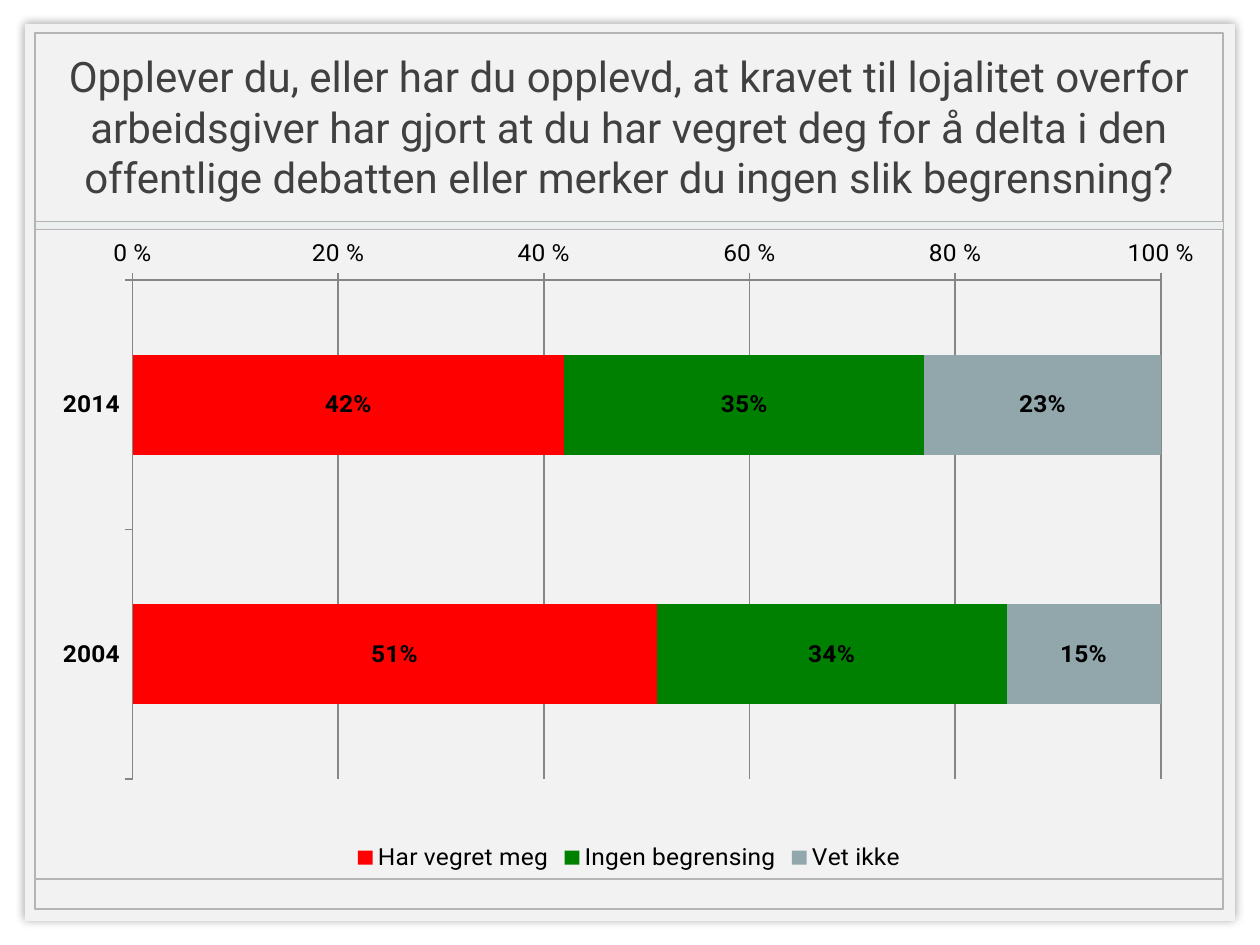
import lxml.etree
import pptx
import pptx.chart.data
import pptx.dml.color
import pptx.enum.chart
import pptx.enum.shapes
import pptx.enum.text
import pptx.oxml
import pptx.oxml.ns
import pptx.util

PIXELS_PER_INCH = 126
FONT = "Roboto"
COLORS = {
    "panel": "F2F2F2",
    "band": "EBEFF0",
    "rule": "B4B4B3",
    "title": "404040",
    "text": "000000",
    "grid": "868686",
    "shadow": "000000",
}
TITLE = (
    "Opplever du, eller har du opplevd, at kravet til lojalitet overfor "
    "arbeidsgiver har gjort at du har vegret deg for å delta i den "
    "offentlige debatten eller merker du ingen slik begrensning?"
)
YEARS = ("2014", "2004")
ANSWERS = (
    ("Har vegret meg", (0.42, 0.51), "FF0000"),
    ("Ingen begrensing", (0.35, 0.34), "008000"),
    ("Vet ikke", (0.23, 0.15), "91A7AB"),
)
PLOT_LAYOUT = {"x": 0.08, "y": 0.02, "w": 0.87, "h": 0.82}


def px(length):
    return pptx.util.Emu(round(length * 914400 / PIXELS_PER_INCH))


def rgb(color):
    return pptx.dml.color.RGBColor.from_string(color)


def set_line(line, color, width):
    line.color.rgb = rgb(color)
    line.width = pptx.util.Pt(width)


def set_font(font, size, color, bold=False):
    font.name = FONT
    font.size = pptx.util.Pt(size)
    font.bold = bold
    font.color.rgb = rgb(color)


def add_rectangle(slide, box, fill=None, line_width=None):
    shape = slide.shapes.add_shape(
        pptx.enum.shapes.MSO_SHAPE.RECTANGLE, *map(px, box)
    )
    shape.shadow.inherit = False
    if fill:
        shape.fill.solid()
        shape.fill.fore_color.rgb = rgb(fill)
    else:
        shape.fill.background()
    if line_width:
        set_line(shape.line, COLORS["rule"], line_width)
    else:
        shape.line.fill.background()
    return shape


def add_soft_shadow(shape):
    effects = shape.element.spPr.find(pptx.oxml.ns.qn("a:effectLst"))
    effects.append(pptx.oxml.parse_xml(
        f'<a:outerShdw {pptx.oxml.ns.nsdecls("a")} blurRad="{pptx.util.Pt(5)}" '
        'dist="0" dir="0" algn="ctr" rotWithShape="0">'
        f'<a:srgbClr val="{COLORS["shadow"]}"><a:alpha val="40000"/></a:srgbClr>'
        "</a:outerShdw>"
    ))


def add_frame(slide, box):
    left, top, width, height = box
    add_soft_shadow(add_rectangle(slide, box, COLORS["panel"]))
    inner_left, inner_width = left + 10, width - 22
    add_rectangle(
        slide, (inner_left, top + 9, inner_width, height - 21), line_width=1
    )
    rule_top = px(top + 855)
    rule = slide.shapes.add_connector(
        pptx.enum.shapes.MSO_CONNECTOR.STRAIGHT,
        px(inner_left), rule_top, px(inner_left + inner_width), rule_top,
    )
    set_line(rule.line, COLORS["rule"], 1)
    lxml.etree.SubElement(rule.element.spPr, pptx.oxml.ns.qn("a:effectLst"))
    add_rectangle(
        slide, (inner_left, top + 197, inner_width, 8), COLORS["band"], 0.25
    )


def place_title(slide, box):
    title = slide.shapes.title
    title.left, title.top, title.width, title.height = map(px, box)
    slide.shapes.element.append(title.element)
    text_frame = title.text_frame
    text_frame.text = TITLE
    text_frame.word_wrap = True
    text_frame.auto_size = pptx.enum.text.MSO_AUTO_SIZE.NONE
    text_frame.vertical_anchor = pptx.enum.text.MSO_ANCHOR.MIDDLE
    paragraph = text_frame.paragraphs[0]
    paragraph.alignment = pptx.enum.text.PP_ALIGN.CENTER
    set_font(paragraph.font, 24, COLORS["title"])


def set_plot_layout(chart):
    plot_area = chart.element.chart.plotArea
    for layout in plot_area.findall(pptx.oxml.ns.qn("c:layout")):
        plot_area.remove(layout)
    sizes = "".join(
        f'<c:{name} val="{value}"/>' for name, value in PLOT_LAYOUT.items()
    )
    plot_area.insert(0, pptx.oxml.parse_xml(
        f'<c:layout {pptx.oxml.ns.nsdecls("c")}><c:manualLayout>'
        '<c:layoutTarget val="inner"/><c:xMode val="edge"/><c:yMode val="edge"/>'
        f"{sizes}</c:manualLayout></c:layout>"
    ))


def format_axes(chart):
    category_axis, value_axis = chart.category_axis, chart.value_axis
    for axis, bold in ((category_axis, True), (value_axis, False)):
        axis.major_tick_mark = pptx.enum.chart.XL_TICK_MARK.OUTSIDE
        set_font(axis.tick_labels.font, 14, COLORS["text"], bold)
        set_line(axis.format.line, COLORS["grid"], 1)
    category_axis.reverse_order = True
    category_axis.crosses = pptx.enum.chart.XL_AXIS_CROSSES.MAXIMUM
    value_axis.minimum_scale = 0
    value_axis.maximum_scale = 1
    value_axis.major_unit = 0.2
    value_axis.has_major_gridlines = True
    set_line(value_axis.major_gridlines.format.line, COLORS["grid"], 1)
    value_axis.tick_labels.number_format = "0 %"
    value_axis.tick_labels.number_format_is_linked = False


def add_answer_chart(slide, box):
    chart_data = pptx.chart.data.CategoryChartData(number_format="0%")
    chart_data.categories = YEARS
    for name, shares, _ in ANSWERS:
        chart_data.add_series(name, shares)
    chart = slide.shapes.add_chart(
        pptx.enum.chart.XL_CHART_TYPE.BAR_STACKED_100, *map(px, box), chart_data
    ).chart
    set_font(chart.font, 18, COLORS["text"])
    chart.has_title = False
    chart.has_legend = True
    chart.legend.position = pptx.enum.chart.XL_LEGEND_POSITION.BOTTOM
    chart.legend.include_in_layout = False
    set_font(chart.legend.font, 14, COLORS["text"])
    format_axes(chart)
    set_plot_layout(chart)
    plot = chart.plots[0]
    plot.gap_width = 150
    plot.overlap = 100
    plot.vary_by_categories = False
    for series, (_, _, color) in zip(plot.series, ANSWERS):
        series.format.fill.solid()
        series.format.fill.fore_color.rgb = rgb(color)
        labels = series.data_labels
        labels.show_value = True
        labels.number_format = "0%"
        labels.number_format_is_linked = False
        set_font(labels.font, 14, COLORS["text"], True)


def main():
    presentation = pptx.Presentation()
    presentation.slide_width = px(1260)
    presentation.slide_height = px(945)
    slide = presentation.slides.add_slide(presentation.slide_layouts[5])
    add_frame(slide, (25, 24, 1210, 897))
    place_title(slide, (38, 34, 1182, 185))
    add_answer_chart(slide, (38, 239, 1182, 638))
    presentation.save("out.pptx")


if __name__ == "__main__":
    main()
